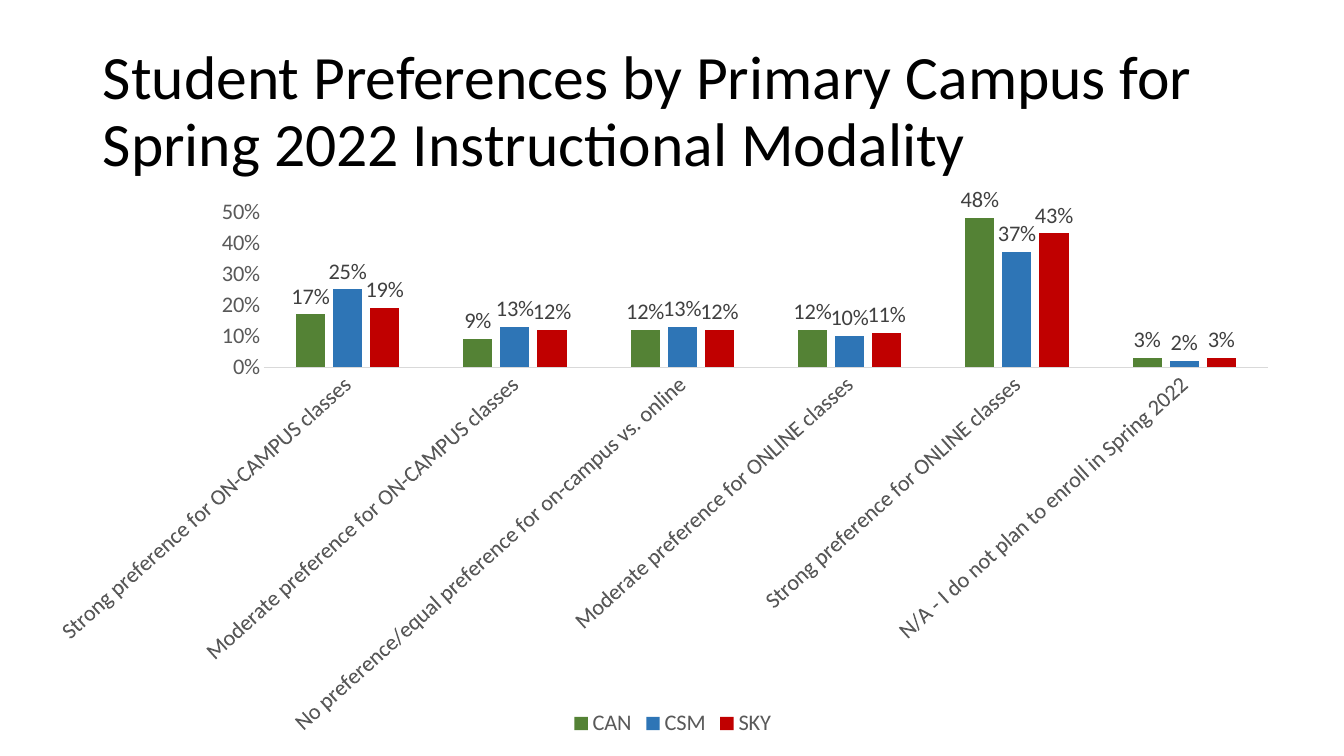
from dataclasses import dataclass

from lxml import etree
from pptx import Presentation
from pptx.chart.data import CategoryChartData
from pptx.dml.color import RGBColor
from pptx.enum.chart import XL_CHART_TYPE, XL_LABEL_POSITION, XL_LEGEND_POSITION, XL_TICK_MARK
from pptx.enum.text import MSO_ANCHOR, PP_ALIGN
from pptx.oxml.ns import qn
from pptx.util import Inches, Pt

COLUMN = XL_CHART_TYPE.COLUMN_CLUSTERED
OUTER = XL_LABEL_POSITION.OUTSIDE_END
BOTTOM = XL_LEGEND_POSITION.BOTTOM
NO_TICK = XL_TICK_MARK.NONE
MIDDLE = MSO_ANCHOR.MIDDLE
LEFT = PP_ALIGN.LEFT

WIDE, HIGH = 13.33, 7.5
TITLE = "Student Preferences by Primary Campus for Spring 2022 Instructional Modality"
CHOICES = [
    "Strong preference for ON-CAMPUS classes",
    "Moderate preference for ON-CAMPUS classes",
    "No preference/equal preference for on-campus vs. online",
    "Moderate preference for ONLINE classes",
    "Strong preference for ONLINE classes",
    "N/A - I do not plan to enroll in Spring 2022",
]
CAMPUSES = {
    "CAN": (0.17, 0.09, 0.12, 0.12, 0.48, 0.03),
    "CSM": (0.25, 0.13, 0.13, 0.10, 0.37, 0.02),
    "SKY": (0.19, 0.12, 0.12, 0.11, 0.43, 0.03),
}


@dataclass(frozen=True)
class Theme:
    face: str = "Calibri"
    head: int = 44
    body: int = 16
    tilt: int = -42
    black: str = "000000"
    gray: str = "595959"
    dark: str = "404040"
    rule: str = "D9D9D9"
    bars: tuple = ("548235", "2E75B6", "C00000")


class Deck:
    def __init__(self, theme):
        self.theme = theme
        self.show = Presentation()
        self.show.slide_width = Inches(WIDE)
        self.show.slide_height = Inches(HIGH)
        self.slide = self.show.slides.add_slide(self.show.slide_layouts[5])

    def box(self, left, top, width, height):
        return (Inches(left * WIDE), Inches(top * HIGH),
                Inches(width * WIDE), Inches(height * HIGH))

    def style(self, font, size, color):
        font.name = self.theme.face
        font.size = Pt(size)
        font.color.rgb = RGBColor.from_string(color)

    def title(self, text, *area):
        shape = self.slide.shapes.title
        shape.left, shape.top, shape.width, shape.height = self.box(*area)
        frame = shape.text_frame
        frame.text = text
        frame.word_wrap = True
        frame.vertical_anchor = MIDDLE
        para = frame.paragraphs[0]
        para.alignment = LEFT
        para.line_spacing = 0.9
        self.style(para.runs[0].font, self.theme.head, self.theme.black)

    def chart(self, names, table, *area):
        data = CategoryChartData(number_format="0%")
        data.categories = names
        for name, values in table.items():
            data.add_series(name, values)
        chart = self.slide.shapes.add_chart(COLUMN, *self.box(*area), data).chart
        self.style(chart.font, self.theme.body, self.theme.black)
        chart.has_title = False
        chart.has_legend = True
        chart.legend.position = BOTTOM
        chart.legend.include_in_layout = False
        self.style(chart.legend.font, self.theme.body, self.theme.gray)
        self.axes(chart)
        self.bars(chart.plots[0])
        self.place(chart, "plotArea", 0, layoutTarget="inner", xMode="edge",
                   yMode="edge", x=0.175, y=0.041, w=0.805, h=0.274)
        self.place(chart, "legend", 1, xMode="edge", yMode="edge", x=0.418, y=0.911)

    def axes(self, chart):
        for axis in (chart.category_axis, chart.value_axis):
            axis.major_tick_mark = axis.minor_tick_mark = NO_TICK
            axis.has_major_gridlines = False
            self.style(axis.tick_labels.font, self.theme.body, self.theme.gray)
        line = chart.category_axis.format.line
        line.color.rgb = RGBColor.from_string(self.theme.rule)
        line.width = Pt(0.75)
        scale = chart.value_axis
        scale.format.line.fill.background()
        scale.minimum_scale, scale.maximum_scale, scale.major_unit = 0, 0.5, 0.1
        scale.tick_labels.number_format = "0%"
        scale.tick_labels.number_format_is_linked = False
        body = chart.element.xpath(".//c:catAx/c:txPr/a:bodyPr")[0]
        body.set("rot", str(self.theme.tilt * 60000))
        body.set("vert", "horz")

    def bars(self, plot):
        plot.gap_width = 219
        plot.overlap = -27
        plot.vary_by_categories = False
        for row, color in zip(plot.series, self.theme.bars):
            row.format.fill.solid()
            row.format.fill.fore_color.rgb = RGBColor.from_string(color)
            tags = row.data_labels
            tags.show_value = True
            tags.position = OUTER
            tags.number_format = "0%"
            tags.number_format_is_linked = False
            self.style(tags.font, self.theme.body, self.theme.dark)

    def place(self, chart, part, index, **rules):
        area = chart.element.xpath(".//c:" + part)[0]
        for old in area.findall(qn("c:layout")):
            area.remove(old)
        layout = etree.Element(qn("c:layout"))
        area.insert(index, layout)
        manual = etree.SubElement(layout, qn("c:manualLayout"))
        for tag, value in rules.items():
            etree.SubElement(manual, qn("c:" + tag)).set("val", str(value))

    def save(self):
        self.show.save("out.pptx")


def main():
    deck = Deck(Theme())
    deck.title(TITLE, 0.069, 0.053, 0.863, 0.193)
    deck.chart(CHOICES, CAMPUSES, 0.034, 0.247, 0.928, 0.753)
    deck.save()


if __name__ == "__main__":
    main()
